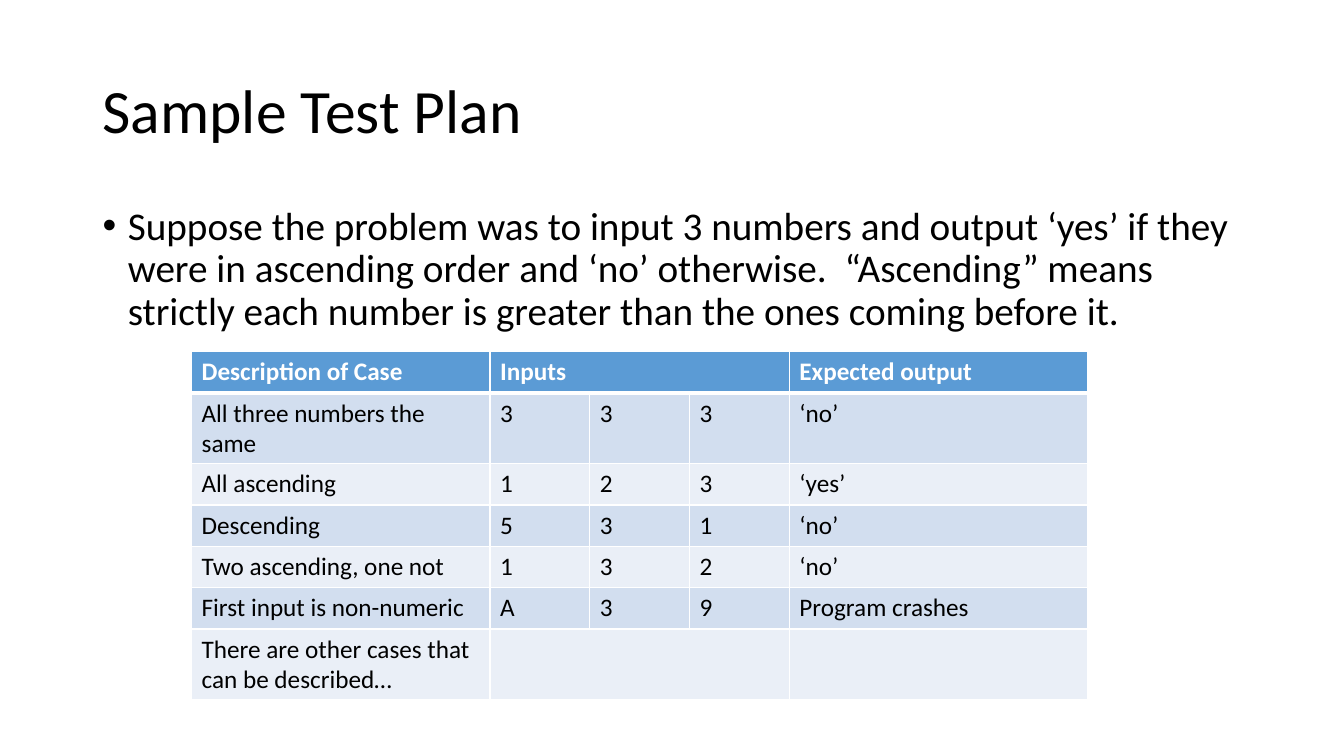
from lxml import etree
from pptx import Presentation
from pptx import util as u
from pptx.dml.color import RGBColor
from pptx.enum import text
from pptx.oxml import ns

COLORS = {
    "ink": "000000",
    "white": "FFFFFF",
    "header": "5B9BD5",
    "odd": "D2DEEF",
    "even": "EAEFF7",
}
FONT = "Calibri"
COLUMN_WIDTHS = [2.96, 0.99, 0.99, 0.99, 2.96]
ROW_HEIGHT = 0.41
INPUT_COLUMNS = (1, 3)
TEST_CASES = [
    ["Description of Case", "Inputs", "", "", "Expected output"],
    ["All three numbers the same", "3", "3", "3", "‘no’"],
    ["All ascending", "1", "2", "3", "‘yes’"],
    ["Descending", "5", "3", "1", "‘no’"],
    ["Two ascending, one not", "1", "3", "2", "‘no’"],
    ["First input is non-numeric", "A", "3", "9", "Program crashes"],
    ["There are other cases that can be described…", "", "", "", ""],
]
PROBLEM = (
    "Suppose the problem was to input 3 numbers and output ‘yes’ if they "
    "were in ascending order and ‘no’ otherwise.  “Ascending” means strictly "
    "each number is greater than the ones coming before it."
)


def write_text(frame, content, size=18, color="ink", bold=False, line_spacing=None, space_before=None):
    paragraph = frame.paragraphs[0]
    paragraph.line_spacing = line_spacing
    if space_before is not None:
        paragraph.space_before = u.Pt(space_before)
    paragraph.font.size = u.Pt(size)
    if content:
        run = paragraph.add_run()
        run.text = content
        run.font.name = FONT
        run.font.size = u.Pt(size)
        run.font.bold = bold
        run.font.color.rgb = RGBColor.from_string(COLORS[color])
    return paragraph


def add_text_box(slide, left, top, width, height, content, anchor=text.MSO_ANCHOR.TOP, **style):
    box = slide.shapes.add_textbox(*map(u.Inches, (left, top, width, height)))
    frame = box.text_frame
    frame.word_wrap = True
    frame.vertical_anchor = anchor
    return write_text(frame, content, **style)


def add_bullet(paragraph, indent):
    properties = paragraph._p.get_or_add_pPr()
    properties.set("marL", str(u.Inches(indent)))
    properties.set("indent", str(-u.Inches(indent)))
    etree.SubElement(properties, ns.qn("a:buFont")).set("typeface", "Arial")
    etree.SubElement(properties, ns.qn("a:buChar")).set("char", "•")


def set_borders(cell, top=1, bottom=1):
    properties = cell._tc.get_or_add_tcPr()
    for side, width in (("L", 1), ("R", 1), ("T", top), ("B", bottom)):
        line = etree.SubElement(properties, ns.qn(f"a:ln{side}"), w=str(u.Pt(width)))
        fill = etree.SubElement(line, ns.qn("a:solidFill"))
        etree.SubElement(fill, ns.qn("a:srgbClr"), val=COLORS["white"])


def add_case_table(slide, left, top):
    row_count, column_count = len(TEST_CASES), len(COLUMN_WIDTHS)
    table = slide.shapes.add_table(
        row_count, column_count, u.Inches(left), u.Inches(top),
        u.Inches(sum(COLUMN_WIDTHS)), u.Inches(ROW_HEIGHT * row_count),
    ).table
    for column, width in zip(table.columns, COLUMN_WIDTHS):
        column.width = u.Inches(width)
    for row_index, values in enumerate(TEST_CASES):
        table.rows[row_index].height = u.Inches(ROW_HEIGHT)
        is_header = row_index == 0
        band = "header" if is_header else ("even", "odd")[row_index % 2]
        for column_index, value in enumerate(values):
            cell = table.cell(row_index, column_index)
            set_borders(cell, top=3 if row_index == 1 else 1, bottom=3 if is_header else 1)
            cell.fill.solid()
            cell.fill.fore_color.rgb = RGBColor.from_string(COLORS[band])
            write_text(cell.text_frame, value, color="white" if is_header else "ink", bold=is_header)
    first, last = INPUT_COLUMNS
    for row_index in (0, row_count - 1):
        table.cell(row_index, first).merge(table.cell(row_index, last))


def main():
    presentation = Presentation()
    presentation.slide_width = u.Inches(13.33)
    presentation.slide_height = u.Inches(7.5)
    slide = presentation.slides.add_slide(presentation.slide_layouts[6])
    add_text_box(slide, 0.92, 0.4, 11.5, 1.45, "Sample Test Plan",
                 anchor=text.MSO_ANCHOR.MIDDLE, size=44, line_spacing=0.9)
    problem = add_text_box(slide, 0.92, 2, 11.5, 4.76, PROBLEM,
                           size=28, line_spacing=0.9, space_before=10)
    add_bullet(problem, 0.25)
    add_case_table(slide, 1.9, 3.49)
    presentation.save("out.pptx")


if __name__ == "__main__":
    main()
